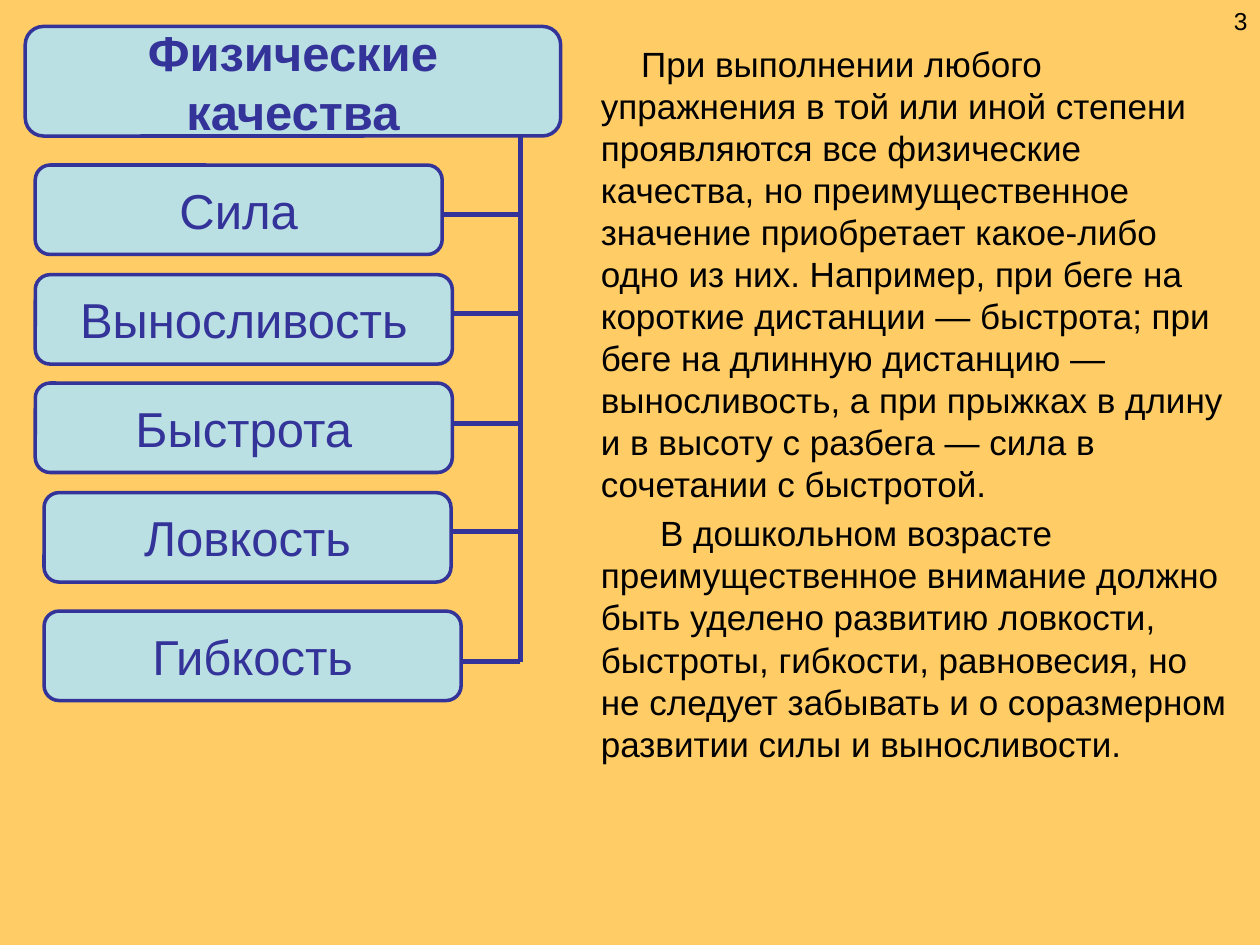
from pptx import Presentation
from pptx.util import Inches, Pt
from pptx.dml.color import RGBColor as Rgb
from pptx.enum.shapes import MSO_SHAPE as Shape, MSO_CONNECTOR as Conn
from pptx.enum.text import PP_ALIGN as Align, MSO_ANCHOR as Anchor
from pptx.oxml.ns import qn
from lxml import etree

COLORS = {"back": "FFCC66", "box": "BBE0E3", "edge": "333399", "text": "000000"}
FONT = "Arial"

TITLE = ("Физические качества", 0.2, 0.21, 4.25, 0.87)
ITEMS = [
    ("Сила", 0.28, 1.31, 3.23, 1.7),
    ("Выносливость", 0.28, 2.18, 3.31, 2.49),
    ("Быстрота", 0.28, 3.04, 3.31, 3.36),
    ("Ловкость", 0.35, 3.91, 3.23, 4.22),
    ("Гибкость", 0.35, 4.85, 3.31, 5.25),
]
ITEM_H = 0.71
TRUNK = 4.13
BODY = [
    ("При выполнении любого упражнения в той или иной степени проявляются "
     "все физические качества, но преимущественное значение приобретает "
     "какое-либо одно из них. Например, при беге на короткие дистанции — "
     "быстрота; при беге на длинную дистанцию — выносливость, а при прыжках "
     "в длину и в высоту с разбега — сила в сочетании с быстротой.", 0.32),
    ("В дошкольном возрасте преимущественное внимание должно быть уделено "
     "развитию ловкости, быстроты, гибкости, равновесия, но не следует "
     "забывать и о соразмерном развитии силы и выносливости.", 0.47),
]
NUMBER = "3"


def color(name):
    return Rgb.from_string(COLORS[name])


def add_run(para, text, size, tone, bold=False):
    run = para.add_run()
    run.text = text
    font = run.font
    font.name, font.size, font.bold = FONT, Pt(size), bold
    font.color.rgb = color(tone)


def add_box(slide, text, x, y, w, h, bold=False):
    box = slide.shapes.add_shape(
        Shape.ROUNDED_RECTANGLE, *map(Inches, (x, y, w, h)))
    box.shadow.inherit = False
    box.fill.solid()
    box.fill.fore_color.rgb = color("box")
    box.line.color.rgb = color("edge")
    box.line.width = Pt(2)
    frame = box.text_frame
    frame.word_wrap = True
    frame.vertical_anchor = Anchor.MIDDLE
    para = frame.paragraphs[0]
    para.alignment = Align.CENTER
    add_run(para, text, 28, "edge", bold)


def add_line(slide, x1, y1, x2, y2, width):
    line = slide.shapes.add_connector(
        Conn.STRAIGHT, *map(Inches, (x1, y1, x2, y2)))
    line.line.color.rgb = color("edge")
    line.line.width = Pt(width)
    etree.SubElement(line._element.spPr, qn("a:effectLst"))


def add_frame(slide, x, y, w, h):
    frame = slide.shapes.add_textbox(*map(Inches, (x, y, w, h))).text_frame
    frame.word_wrap = True
    return frame


def main():
    deck = Presentation()
    deck.slide_width, deck.slide_height = Inches(10), Inches(7.5)
    slide = deck.slides.add_slide(deck.slide_layouts[6])
    slide.background.fill.solid()
    slide.background.fill.fore_color.rgb = color("back")

    add_box(slide, *TITLE, bold=True)
    add_line(slide, TRUNK, TITLE[2] + TITLE[4], TRUNK, ITEMS[-1][4], 2.5)
    for text, x, y, w, level in ITEMS:
        add_box(slide, text, x, y, w, ITEM_H)
        add_line(slide, TRUNK, level, x + w, level, 2.75)

    frame = add_frame(slide, 4.29, 0.29, 5.59, 6.41)
    for i, (text, indent) in enumerate(BODY):
        para = frame.add_paragraph() if i else frame.paragraphs[0]
        props = para._p.get_or_add_pPr()
        props.set("marL", str(Inches(0.38)))
        props.set("indent", str(Inches(indent)))
        if i:
            para.space_before = Pt(4)
        add_run(para, text, 20, "text")

    para = add_frame(slide, 7.67, 0, 2.33, 0.52).paragraphs[0]
    para.alignment = Align.RIGHT
    add_run(para, NUMBER, 14, "text")

    deck.save("out.pptx")


if __name__ == "__main__":
    main()
